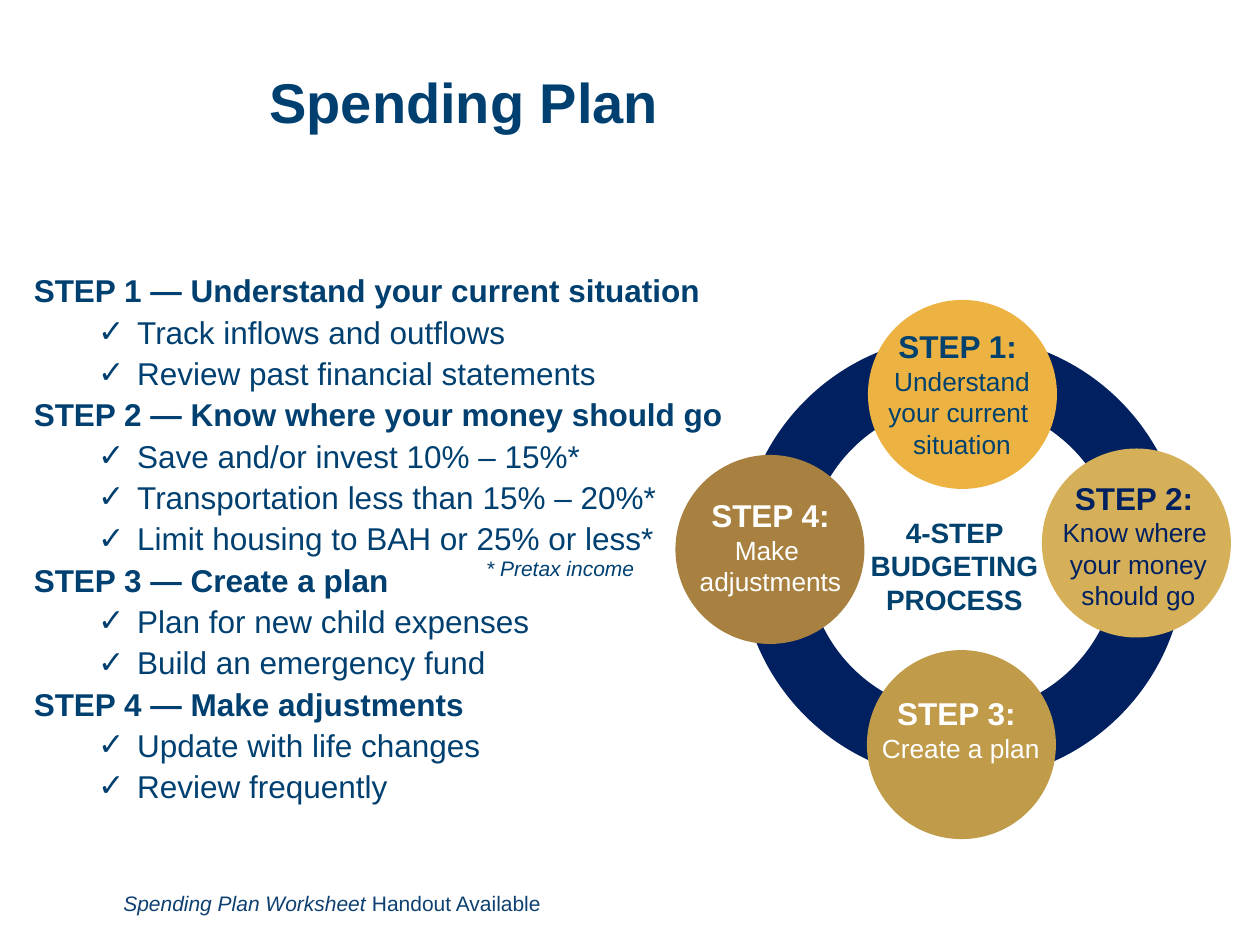
"""Build the Spending Plan slide with its four-step budgeting ring."""
from dataclasses import dataclass

from lxml import etree
from pptx import Presentation
from pptx.dml.color import RGBColor
from pptx.enum.shapes import MSO_SHAPE
from pptx.enum.text import MSO_ANCHOR, PP_ALIGN
from pptx.oxml.ns import qn
from pptx.util import Pt

OVAL = MSO_SHAPE.OVAL
MIDDLE = MSO_ANCHOR.MIDDLE
CENTER = PP_ALIGN.CENTER


@dataclass(frozen=True)
class Theme:
    font: str = "Arial"
    ink: str = "004071"
    label: str = "01416E"
    foot: str = "0E4071"
    navy: str = "002060"
    white: str = "FFFFFF"
    amber: str = "ECB342"
    sand: str = "D6B059"
    gold: str = "C09B49"
    bronze: str = "A88140"
    title: float = 32
    head: float = 18
    hub: float = 16
    body: float = 15
    note: float = 12


@dataclass(frozen=True)
class Box:
    left: float
    top: float
    width: float
    height: float


@dataclass(frozen=True)
class Step:
    disc: Box
    area: Box
    fill: str
    ink: str
    lines: tuple[str, ...]


@dataclass(frozen=True)
class Topic:
    head: str
    items: tuple[str, ...]


THEME = Theme()
DISC = 108
AREA = 104.4

TOPICS = (
    Topic("STEP 1 — Understand your current situation",
          ("Track inflows and outflows", "Review past financial statements")),
    Topic("STEP 2 — Know where your money should go",
          ("Save and/or invest 10% – 15%*",
           "Transportation less than 15% – 20%*",
           "Limit housing to BAH or 25% or less*")),
    Topic("STEP 3 — Create a plan",
          ("Plan for new child expenses", "Build an emergency fund")),
    Topic("STEP 4 — Make adjustments",
          ("Update with life changes", "Review frequently")),
)

STEPS = (
    Step(Box(496, 171.4, DISC, DISC), Box(497.5, 183.6, AREA, 83.5),
         THEME.amber, THEME.label,
         ("STEP 1: ", "Understand your current ", "situation")),
    Step(Box(595.4, 256.3, DISC, DISC), Box(598.3, 270, AREA, 86.4),
         THEME.sand, THEME.navy,
         ("STEP 2: ", "Know where ", "your money", "should go")),
    Step(Box(495.4, 371.5, DISC, DISC), Box(496.8, 393.1, AREA, 66.2),
         THEME.gold, THEME.white, ("STEP 3: ", "Create a plan")),
    Step(Box(386, 260, DISC, DISC), Box(388.1, 280.1, AREA, 66.2),
         THEME.bronze, THEME.white, ("STEP 4:", "Make ", "adjustments")),
)


def place(box: Box) -> tuple:
    """Return the box as lengths."""
    return Pt(box.left), Pt(box.top), Pt(box.width), Pt(box.height)


def style(para, size: float, ink: str, bold=False, italic=False) -> None:
    """Format every run of a paragraph."""
    for run in para.runs:
        font = run.font
        font.name, font.size = THEME.font, Pt(size)
        font.bold, font.italic = bold, italic
        font.color.rgb = RGBColor.from_string(ink)


def write(slide, box: Box, text: str):
    """Add a wrapping text box and return its frame."""
    frame = slide.shapes.add_textbox(*place(box)).text_frame
    frame.word_wrap = True
    frame.text = text
    return frame


def indent(para, left: float, first: float = 0, mark: str = "") -> None:
    """Set the indent of a paragraph and its bullet mark."""
    props = para._p.get_or_add_pPr()
    props.set("marL", str(Pt(left)))
    props.set("indent", str(Pt(first)))
    if mark:
        etree.SubElement(props, qn("a:buFont")).set("typeface", THEME.font)
        etree.SubElement(props, qn("a:buChar")).set("char", mark)


def outline(slide, box: Box, topics: tuple[Topic, ...]) -> None:
    """Write the topics as headings with ticked items."""
    rows = [(text, text == topic.head)
            for topic in topics for text in (topic.head, *topic.items)]
    frame = write(slide, box, "\n".join(text for text, _ in rows))
    for pos, (para, (_, head)) in enumerate(zip(frame.paragraphs, rows)):
        if head:
            indent(para, 0.7)
        else:
            para.level = 1
            indent(para, 59.8, -22.3, "✓")
        para.space_before = Pt(2 if pos else 0)
        style(para, THEME.head, THEME.ink, bold=head)


def oval(slide, box: Box):
    """Add a plain ellipse."""
    shape = slide.shapes.add_shape(OVAL, *place(box))
    shape.shadow.inherit = False
    return shape


def ring(slide, box: Box, ink: str, width: float) -> None:
    """Draw the open ring behind the steps."""
    shape = oval(slide, box)
    shape.fill.background()
    shape.line.color.rgb = RGBColor.from_string(ink)
    shape.line.width = Pt(width)


def disc(slide, step: Step) -> None:
    """Draw the filled circle of a step."""
    shape = oval(slide, step.disc)
    shape.fill.solid()
    shape.fill.fore_color.rgb = RGBColor.from_string(step.fill)
    shape.line.fill.background()


def label(slide, step: Step) -> None:
    """Write the heading and wording of a step."""
    frame = write(slide, step.area, "\n".join(step.lines))
    for pos, para in enumerate(frame.paragraphs):
        para.alignment = CENTER
        size = THEME.body if pos else THEME.head
        style(para, size, step.ink, bold=pos == 0)


def main() -> None:
    """Build and save the slide."""
    deck = Presentation()
    deck.slide_width, deck.slide_height = Pt(720), Pt(540)
    slide = deck.slides.add_slide(deck.slide_layouts[6])

    title = write(slide, Box(146.9, 7.9, 522.7, 104.4), "Spending Plan")
    title.vertical_anchor = MIDDLE
    title.paragraphs[0].line_spacing = 0.9
    style(title.paragraphs[0], THEME.title, THEME.ink, bold=True)

    outline(slide, Box(11.5, 151.5, 423.4, 338.4), TOPICS)
    note = write(slide, Box(234, 314, 157, 21.6), "* Pretax income").paragraphs[0]
    indent(note, 36.7)
    style(note, THEME.note, THEME.ink, italic=True)

    ring(slide, Box(442, 211, 216, 216), THEME.navy, 38.5)
    for step in STEPS:
        disc(slide, step)
    hub = write(slide, Box(479.5, 290.9, 131.8, 65.5), "4-STEP BUDGETING\nPROCESS")
    for para in hub.paragraphs:
        para.alignment = CENTER
        style(para, THEME.hub, THEME.label, bold=True)
    for step in STEPS:
        label(slide, step)

    foot = write(slide, Box(63.4, 505.4, 319.7, 21.6),
                 "Spending Plan Worksheet").paragraphs[0]
    foot.add_run().text = " Handout Available"
    style(foot, THEME.note, THEME.foot)
    foot.runs[0].font.italic = True

    deck.save("out.pptx")


if __name__ == "__main__":
    main()
